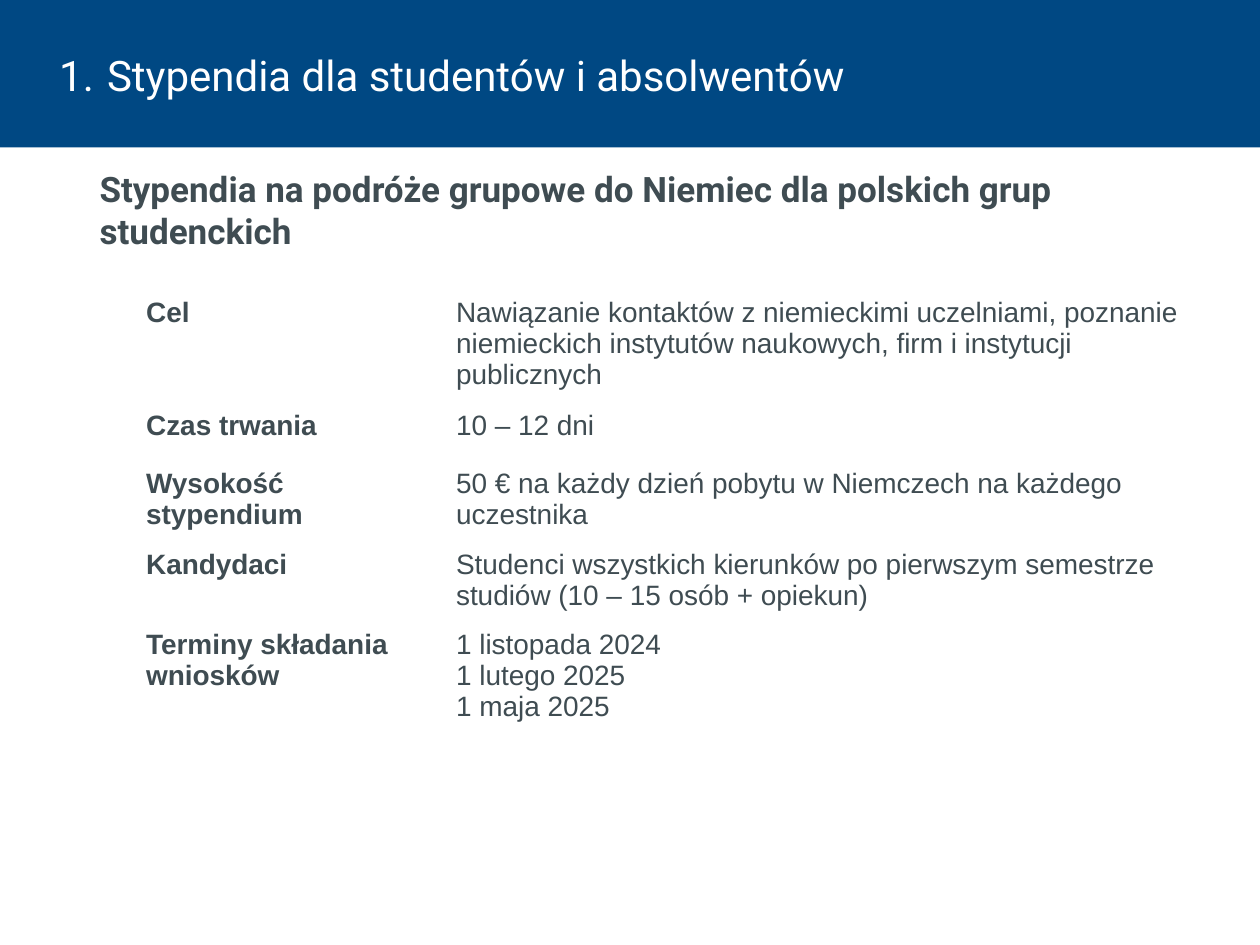
from lxml import etree
from pptx import Presentation
from pptx.dml.color import RGBColor
from pptx.enum.shapes import MSO_SHAPE
from pptx.enum.text import MSO_ANCHOR, PP_ALIGN
from pptx.oxml.ns import qn
from pptx.util import Inches, Pt

RECTANGLE = MSO_SHAPE.RECTANGLE
MIDDLE = MSO_ANCHOR.MIDDLE
TOP = MSO_ANCHOR.TOP
LEFT = PP_ALIGN.LEFT

NAVY = RGBColor(0x00, 0x48, 0x83)
SLATE = RGBColor(0x3F, 0x4C, 0x52)
WHITE = RGBColor(0xFF, 0xFF, 0xFF)

HEADING_FONT = "Roboto"
BODY_FONT = "Arial"

GRANT_DETAILS = [
    (0.88, "Cel", ["Nawiązanie kontaktów z niemieckimi uczelniami, poznanie "
                   "niemieckich instytutów naukowych, firm i instytucji publicznych"]),
    (0.46, "Czas trwania", ["10 – 12 dni"]),
    (0.64, "Wysokość stypendium",
     ["50 € na każdy dzień pobytu w Niemczech na każdego uczestnika"]),
    (0.52, "Kandydaci", ["Studenci wszystkich kierunków po pierwszym semestrze "
                         "studiów (10 – 15 osób + opiekun)"]),
    (1.3, "Terminy składania wniosków",
     ["1 listopada 2024", "1 lutego 2025", "1 maja 2025"]),
]


class SlideBuilder:
    def __init__(self, slide):
        self.slide = slide

    def add_run(self, paragraph, text, font, size, color, bold=False):
        paragraph.alignment = LEFT
        run = paragraph.add_run()
        run.text = text
        run.font.name = font
        run.font.size = Pt(size)
        run.font.bold = bold
        run.font.color.rgb = color

    def set_margins(self, frame, left, top, right, bottom):
        frame.margin_left = Inches(left)
        frame.margin_top = Inches(top)
        frame.margin_right = Inches(right)
        frame.margin_bottom = Inches(bottom)

    def title_band(self, text, width, height):
        band = self.slide.shapes.add_shape(
            RECTANGLE, 0, 0, Inches(width), Inches(height))
        band.shadow.inherit = False
        band.fill.solid()
        band.fill.fore_color.rgb = NAVY
        band.line.fill.background()
        frame = band.text_frame
        frame.word_wrap = True
        frame.vertical_anchor = MIDDLE
        self.set_margins(frame, 0.47, 0.05, 0.1, 0.05)
        paragraph = frame.paragraphs[0]
        paragraph.line_spacing = Pt(30)
        properties = paragraph._p.get_or_add_pPr()
        properties.set("marL", str(Inches(0.38)))
        properties.set("indent", str(-Inches(0.38)))
        etree.SubElement(properties, qn("a:buFont"), typeface="+mj-lt")
        etree.SubElement(properties, qn("a:buAutoNum"), type="arabicPeriod")
        self.add_run(paragraph, text, HEADING_FONT, 24, WHITE)

    def subtitle(self, text, left, top, width, height):
        box = self.slide.shapes.add_textbox(
            Inches(left), Inches(top), Inches(width), Inches(height))
        frame = box.text_frame
        frame.word_wrap = True
        self.set_margins(frame, 0, 0, 0, 0)
        self.add_run(frame.paragraphs[0], text, HEADING_FONT, 20, SLATE, True)

    def cell_borders(self, cell):
        properties = cell._tc.get_or_add_tcPr()
        for side in ("a:lnL", "a:lnR", "a:lnT", "a:lnB"):
            border = etree.SubElement(properties, qn(side), w=str(Pt(1)))
            fill = etree.SubElement(border, qn("a:solidFill"))
            etree.SubElement(fill, qn("a:srgbClr"), val=str(WHITE))

    def fill_cell(self, cell, lines, bold):
        self.cell_borders(cell)
        cell.fill.background()
        cell.vertical_anchor = TOP
        self.set_margins(cell, 0.1, 0.05, 0.1, 0.05)
        frame = cell.text_frame
        for index, line in enumerate(lines):
            paragraph = frame.add_paragraph() if index else frame.paragraphs[0]
            self.add_run(paragraph, line, BODY_FONT, 16, SLATE, bold)

    def details_table(self, details, left, top, column_widths):
        height = sum(row_height for row_height, _, _ in details)
        table = self.slide.shapes.add_table(
            len(details), len(column_widths), Inches(left), Inches(top),
            Inches(sum(column_widths)), Inches(height)).table
        table.first_row = False
        table.horz_banding = False
        for column, width in zip(table.columns, column_widths):
            column.width = Inches(width)
        for index, (row_height, label, lines) in enumerate(details):
            table.rows[index].height = Inches(row_height)
            self.fill_cell(table.cell(index, 0), [label], True)
            self.fill_cell(table.cell(index, 1), lines, False)


def main():
    presentation = Presentation()
    presentation.slide_width = Inches(10)
    presentation.slide_height = Inches(7.5)
    builder = SlideBuilder(
        presentation.slides.add_slide(presentation.slide_layouts[6]))
    builder.title_band("Stypendia dla studentów i absolwentów", 10, 1.17)
    builder.subtitle(
        "Stypendia na podróże grupowe do Niemiec dla polskich grup studenckich",
        0.79, 1.33, 8.42, 0.78)
    builder.details_table(GRANT_DETAILS, 1.06, 2.31, [2.46, 5.96])
    presentation.save("out.pptx")


if __name__ == "__main__":
    main()
